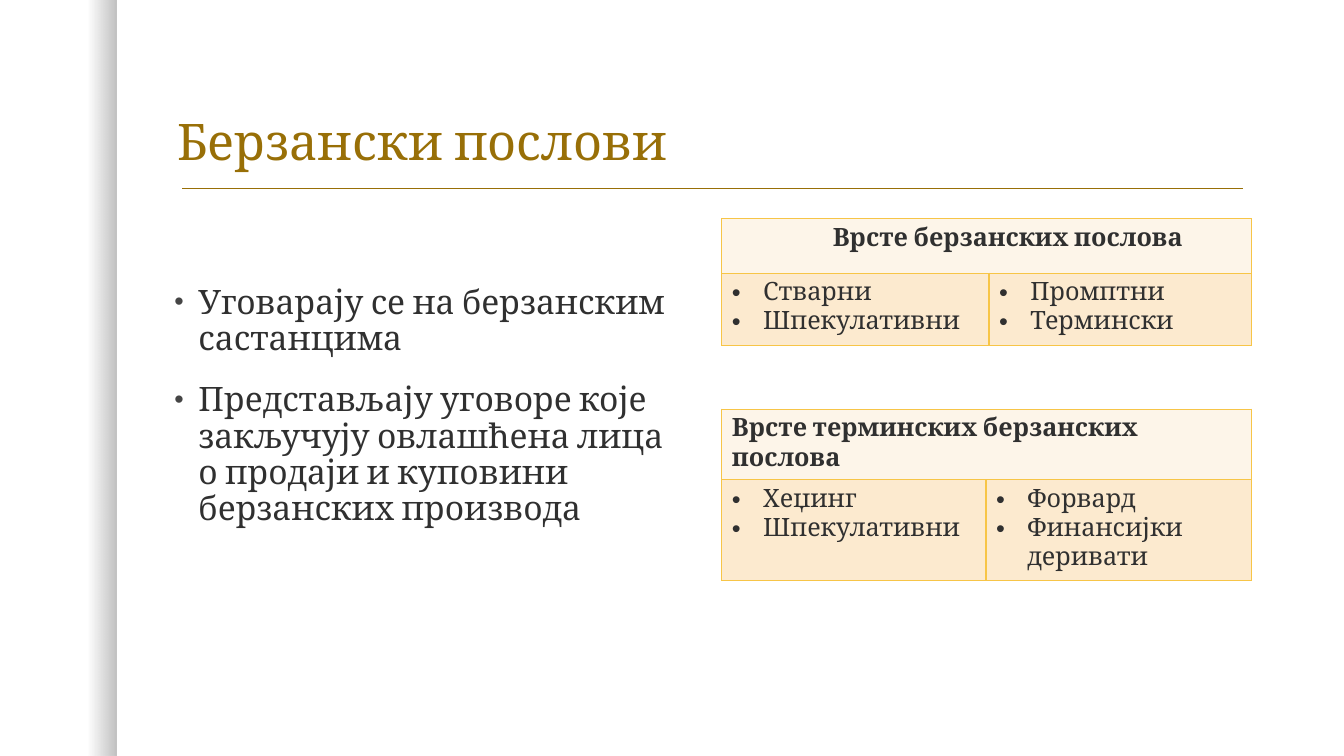
from dataclasses import dataclass

from lxml import etree
from pptx import Presentation
from pptx.dml.color import RGBColor
from pptx.enum.shapes import MSO_CONNECTOR, MSO_SHAPE
from pptx.enum.text import MSO_ANCHOR
from pptx.oxml.ns import qn
from pptx.util import Inches, Pt

STRAIGHT = MSO_CONNECTOR.STRAIGHT
RECTANGLE = MSO_SHAPE.RECTANGLE
BOTTOM = MSO_ANCHOR.BOTTOM

FONT = "Cambria"
BLACK = RGBColor(0x00, 0x00, 0x00)
GOLD = RGBColor(0x98, 0x6F, 0x07)
INK = RGBColor(0x30, 0x30, 0x30)
BULLET_GREY = RGBColor(0x45, 0x45, 0x45)
BORDER = RGBColor(0xF7, 0xC5, 0x47)
HEADER_FILL = RGBColor(0xFD, 0xF5, 0xE9)
BODY_FILL = RGBColor(0xFC, 0xEA, 0xCF)

TABLE_LEFT = 7.16
TABLE_WIDTH = 5.25


@dataclass
class KindsTable:
    top: float
    first_column: float
    row_heights: tuple[float, float]
    header: str
    header_indent: float
    lists: tuple[tuple[str, ...], tuple[str, ...]]


TABLES = [
    KindsTable(2.17, 2.65, (0.54, 0.72), "Врсте берзанских послова", 1,
               (("Стварни", "Шпекулативни"), ("Промптни", "Термински"))),
    KindsTable(4.06, 2.62, (0.54, 0.64), "Врсте терминских берзанских послова", 0,
               (("Хеџинг", "Шпекулативни"), ("Форвард", "Финансијки деривати"))),
]
STATEMENTS = [
    "Уговарају се на берзанским састанцима",
    "Представљају уговоре које закључују овлашћена лица о продаји и куповини "
    "берзанских производа",
]


def style(para, size: float, color: RGBColor, bold: bool = False) -> None:
    para.font.name = FONT
    para.font.size = Pt(size)
    para.font.color.rgb = color
    para.font.bold = bold


def indent(para, left: float, hanging: float = 0) -> None:
    properties = para._p.get_or_add_pPr()
    properties.set("marL", str(Inches(left)))
    properties.set("indent", str(-Inches(hanging)))


def add_bullet(para, hanging: float, color: RGBColor, percent: int) -> None:
    indent(para, hanging, hanging)
    properties = para._p.get_or_add_pPr()
    bullet_color = etree.SubElement(properties, qn("a:buClr"))
    etree.SubElement(bullet_color, qn("a:srgbClr"), val=str(color))
    etree.SubElement(properties, qn("a:buSzPct"), val=str(percent * 1000))
    etree.SubElement(properties, qn("a:buFont"), typeface="Arial")
    etree.SubElement(properties, qn("a:buChar"), char="•")


def add_paragraphs(frame, texts) -> list:
    paras = []
    for index, text in enumerate(texts):
        para = frame.add_paragraph() if index else frame.paragraphs[0]
        para.text = text
        paras.append(para)
    return paras


def add_text_box(page, left: float, top: float, width: float, height: float):
    box = page.shapes.add_textbox(Inches(left), Inches(top), Inches(width), Inches(height))
    box.text_frame.word_wrap = True
    return box.text_frame


def add_edge_shade(page) -> None:
    """Draw the left band, which fades from clear to a quarter black."""
    shade = page.shapes.add_shape(RECTANGLE, 0, 0, Inches(1.16), Inches(7.5))
    shade.shadow.inherit = False
    shade.line.fill.background()
    shade.fill.gradient()
    shade.fill.gradient_angle = 0
    for stop, position in zip(shade.fill.gradient_stops, (0.75, 1)):
        stop.position = position
        stop.color.rgb = BLACK
    for color, opacity in zip(shade.element.spPr.iter(qn("a:srgbClr")), (0, 25)):
        etree.SubElement(color, qn("a:alpha"), val=str(opacity * 1000))


def add_title(page) -> None:
    frame = add_text_box(page, 1.66, 0.42, 10.75, 1.33)
    frame.vertical_anchor = BOTTOM
    para = add_paragraphs(frame, ["Берзански послови"])[0]
    para.line_spacing = 0.9
    style(para, 36, GOLD)

    rule = page.shapes.add_connector(
        STRAIGHT, Inches(1.81), Inches(1.87), Inches(12.33), Inches(1.87))
    rule.line.color.rgb = GOLD
    rule.line.width = Pt(1)
    etree.SubElement(rule.element.spPr, qn("a:effectLst"))


def add_statements(page) -> None:
    frame = add_text_box(page, 1.63, 2.78, 5.25, 3.97)
    for index, para in enumerate(add_paragraphs(frame, STATEMENTS)):
        add_bullet(para, 0.24, BULLET_GREY, 80)
        para.line_spacing = 0.9
        if index:
            para.space_before = Pt(18)
        style(para, 24, INK)


def set_borders(cell) -> None:
    properties = cell._tc.get_or_add_tcPr()
    for side in ("lnL", "lnR", "lnT", "lnB"):
        line = etree.SubElement(properties, qn(f"a:{side}"), w=str(Pt(1)))
        fill = etree.SubElement(line, qn("a:solidFill"))
        etree.SubElement(fill, qn("a:srgbClr"), val=str(BORDER))


def add_kinds_table(page, kinds: KindsTable) -> None:
    table = page.shapes.add_table(
        2, 2, Inches(TABLE_LEFT), Inches(kinds.top),
        Inches(TABLE_WIDTH), Inches(sum(kinds.row_heights))).table
    table.first_row = False
    table.horz_banding = False
    table.columns[0].width = Inches(kinds.first_column)
    table.columns[1].width = Inches(TABLE_WIDTH - kinds.first_column)
    for row, height, color in zip(table.rows, kinds.row_heights, (HEADER_FILL, BODY_FILL)):
        row.height = Inches(height)
        for cell in row.cells:
            set_borders(cell)
            cell.fill.solid()
            cell.fill.fore_color.rgb = color

    header = table.cell(0, 0)
    header.merge(table.cell(0, 1))
    para = add_paragraphs(header.text_frame, [kinds.header])[0]
    indent(para, kinds.header_indent)
    style(para, 18, INK, bold=True)

    for column, names in enumerate(kinds.lists):
        for para in add_paragraphs(table.cell(1, column).text_frame, names):
            add_bullet(para, 0.31, INK, 100)
            style(para, 18, INK)


def main() -> None:
    deck = Presentation()
    deck.slide_width = Inches(13.33)
    deck.slide_height = Inches(7.5)
    page = deck.slides.add_slide(deck.slide_layouts[6])
    add_edge_shade(page)
    add_title(page)
    add_statements(page)
    for kinds in TABLES:
        add_kinds_table(page, kinds)
    deck.save("out.pptx")


if __name__ == "__main__":
    main()
